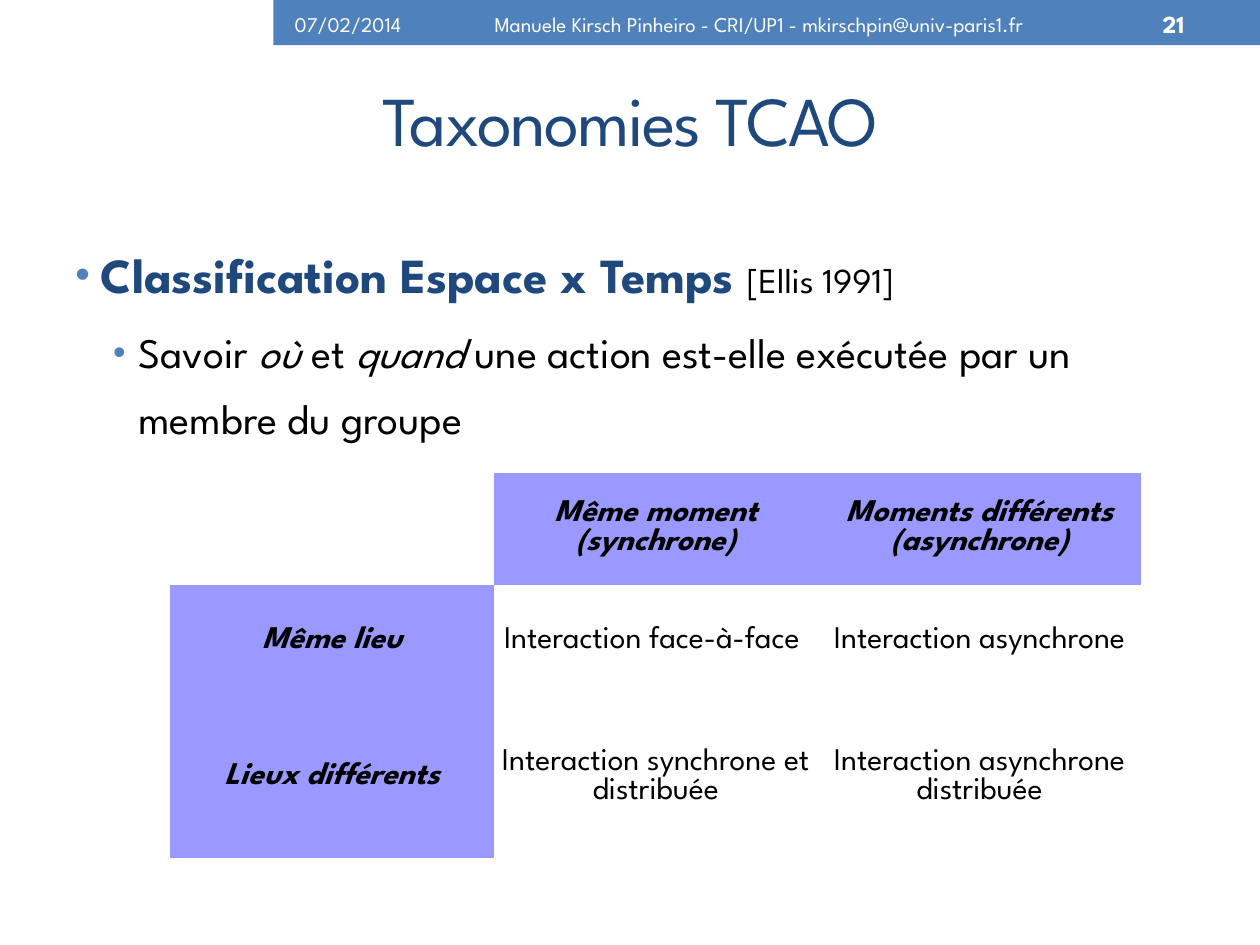
import pptx
import pptx.util
import pptx.dml.color
import pptx.enum.shapes
import pptx.enum.text
import pptx.oxml.ns
from lxml import etree

Inches = pptx.util.Inches
Pt = pptx.util.Pt
ALIGN = pptx.enum.text.PP_ALIGN
MIDDLE = pptx.enum.text.MSO_ANCHOR.MIDDLE
COLORS = {"blue": "4F81BD", "navy": "1F497D", "violet": "9999FF",
          "black": "000000", "white": "FFFFFF"}
FONT = "League Spartan"


def rgb(name):
    return pptx.dml.color.RGBColor.from_string(COLORS[name])


def add_run(p, text, size=18, color="black", bold=False, italic=False):
    r = p.add_run()
    r.text = text
    r.font.name = FONT
    r.font.size = Pt(size)
    r.font.color.rgb = rgb(color)
    r.font.bold = bold
    r.font.italic = italic
    return r


prs = pptx.Presentation()
prs.slide_width = Inches(10)
prs.slide_height = Inches(7.5)
s = prs.slides.add_slide(prs.slide_layouts[6])

# Top band
sp = s.shapes.add_shape(pptx.enum.shapes.MSO_SHAPE.RECTANGLE,
                        Inches(2.17), 0, Inches(7.83), Inches(0.36))
sp.shadow.inherit = False
sp.fill.solid()
sp.fill.fore_color.rgb = rgb("blue")
sp.line.fill.background()

# Title, date, author and page number
lines = [
    ("Taxonomies TCAO", (0.51, 0.44, 8.99, 1), ALIGN.CENTER,
     dict(size=40, color="navy")),
    ("07/02/2014", (2.24, 0.02, 1.1, 0.34), ALIGN.LEFT,
     dict(size=12, color="white")),
    ("Manuele Kirsch Pinheiro - CRI/UP1 - mkirschpin@univ-paris1.fr",
     (3.19, 0.02, 5.67, 0.34), ALIGN.CENTER, dict(size=12, color="white")),
    ("21", (8.94, 0.02, 0.56, 0.34), ALIGN.RIGHT,
     dict(size=14, color="white", bold=True)),
]
for text, box, align, style in lines:
    tf = s.shapes.add_textbox(*map(Inches, box)).text_frame
    tf.word_wrap = True
    tf.vertical_anchor = MIDDLE
    p = tf.paragraphs[0]
    p.alignment = align
    r = add_run(p, text, **style)
    if style["size"] == 40:
        r.font._element.set("spc", "-100")

# Bulleted text: level, left indent, space before, runs
bullets = [
    (0, 0.2, 0, [
        ("Classification Espace x Temps ",
         dict(size=28, color="navy", bold=True)),
        ("[Ellis 1991]", dict(size=20))]),
    (1, 0.5, 4.8, [
        ("Savoir ", dict(size=24)),
        ("où", dict(size=24, italic=True)),
        (" et ", dict(size=24)),
        ("quand", dict(size=24, italic=True)),
        (" une action est-elle exécutée par un membre du groupe",
         dict(size=24))]),
]
tf = s.shapes.add_textbox(Inches(0.5), Inches(1.75),
                          Inches(9), Inches(5.33)).text_frame
tf.word_wrap = True
for i, (level, indent, before, runs) in enumerate(bullets):
    p = tf.add_paragraph() if i else tf.paragraphs[0]
    p.level = level
    p.line_spacing = 1.3
    if before:
        p.space_before = Pt(before)
    pPr = p._p.get_or_add_pPr()
    pPr.set("marL", str(Inches(indent)))
    pPr.set("indent", str(Inches(-0.2)))
    qn = pptx.oxml.ns.qn
    clr = etree.SubElement(pPr, qn("a:buClr"))
    etree.SubElement(clr, qn("a:srgbClr"), val=COLORS["blue"])
    etree.SubElement(pPr, qn("a:buSzPct"), val="85000")
    etree.SubElement(pPr, qn("a:buFont"), typeface="Arial")
    etree.SubElement(pPr, qn("a:buChar"), char="•")
    for text, style in runs:
        add_run(p, text, **style)

# Space / time table, without style or grid
rows = [
    ["", "Même moment\n(synchrone)", "Moments différents\n(asynchrone)"],
    ["Même lieu", "Interaction face-à-face ", "Interaction asynchrone"],
    ["Lieux différents", "Interaction synchrone et distribuée",
     "Interaction asynchrone distribuée"],
]
table = s.shapes.add_table(3, 3, Inches(1.35), Inches(3.75),
                           Inches(7.71), Inches(3.06)).table
table.first_row = False
table.horz_banding = False
table._tbl.tblPr.find(pptx.oxml.ns.qn("a:tableStyleId")).text = \
    "{2D5ABB26-0587-4C30-8999-92F81FD0307C}"
for column in table.columns:
    column.width = Inches(2.57)
for row, height in zip(table.rows, (0.89, 0.89, 1.28)):
    row.height = Inches(height)
for i, row in enumerate(rows):
    for j, text in enumerate(row):
        cell = table.cell(i, j)
        header = (i == 0) != (j == 0)
        if header:
            cell.fill.solid()
            cell.fill.fore_color.rgb = rgb("violet")
        else:
            cell.fill.background()
        cell.vertical_anchor = MIDDLE
        cell.margin_left = cell.margin_right = Inches(0.04)
        cell.margin_top = cell.margin_bottom = Inches(0.04)
        if not text:
            continue
        tf = cell.text_frame
        for k, line in enumerate(text.split("\n")):
            p = tf.add_paragraph() if k else tf.paragraphs[0]
            p.alignment = ALIGN.CENTER
            add_run(p, line, bold=header, italic=header)

prs.save("out.pptx")
